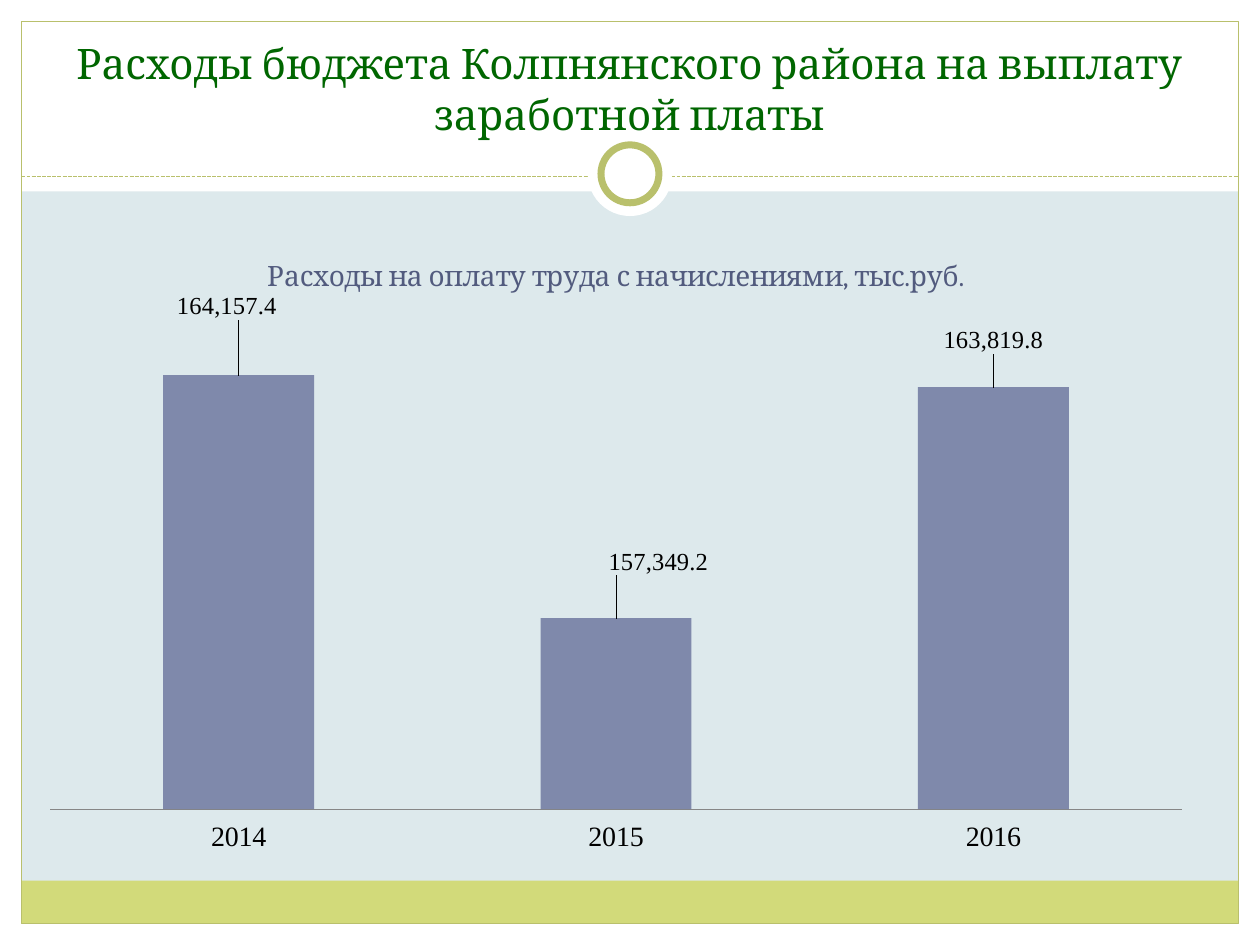
from dataclasses import dataclass

from lxml import etree
from pptx import Presentation
from pptx.chart.data import CategoryChartData
from pptx.dml.color import RGBColor
from pptx.enum.chart import XL_CHART_TYPE, XL_LABEL_POSITION, XL_TICK_LABEL_POSITION, XL_TICK_MARK
from pptx.enum.dml import MSO_LINE
from pptx.enum.shapes import MSO_CONNECTOR, MSO_SHAPE
from pptx.enum.text import MSO_ANCHOR, PP_ALIGN
from pptx.oxml import parse_xml
from pptx.oxml.ns import nsdecls, qn
from pptx.util import Inches, Pt

COLUMN = XL_CHART_TYPE.COLUMN_CLUSTERED
OUTSIDE = XL_LABEL_POSITION.OUTSIDE_END
LOW = XL_TICK_LABEL_POSITION.LOW
NO_TICK = XL_TICK_MARK.NONE
DASH = MSO_LINE.SQUARE_DOT
STRAIGHT = MSO_CONNECTOR.STRAIGHT
RECT, OVAL = MSO_SHAPE.RECTANGLE, MSO_SHAPE.OVAL
BOTTOM, CENTER = MSO_ANCHOR.BOTTOM, PP_ALIGN.CENTER


@dataclass(frozen=True)
class Theme:
    back: str = "DDE9EC"
    white: str = "FFFFFF"
    band: str = "D2DA7A"
    edge: str = "B9C06C"
    title: str = "006600"
    bar: str = "727CA3"
    head: str = "525B7E"
    axis: str = "868686"
    black: str = "000000"
    serif: str = "Cambria"
    roman: str = "Times New Roman"
    big: int = 24
    mid: int = 16
    small: int = 14


T = Theme()

# year, value, label shift as a share of the chart's width and height
DATA = [
    ("2014", 164157.4, -0.01, -0.08),
    ("2015", 157349.2, 0.036, -0.06),
    ("2016", 163819.8, 0, -0.045),
]


def rgb(code):
    return RGBColor.from_string(code)


def style(font, size, color, face):
    font.size, font.name, font.bold = Pt(size), face, False
    font.color.rgb = rgb(color)


def add_text(slide, text, box, size=T.big, color=T.title, face=T.serif, align=CENTER, anchor=BOTTOM):
    frame = slide.shapes.add_textbox(*map(Inches, box)).text_frame
    frame.word_wrap, frame.vertical_anchor = True, anchor
    para = frame.paragraphs[0]
    para.alignment = align
    run = para.add_run()
    run.text = text
    style(run.font, size, color, face)


def add_part(slide, kind, box, fill=None, line=None, width=0.75):
    part = slide.shapes.add_shape(kind, *map(Inches, box))
    part.shadow.inherit = False
    if fill:
        part.fill.solid()
        part.fill.fore_color.rgb = rgb(fill)
    else:
        part.fill.background()
    if line:
        part.line.color.rgb = rgb(line)
        part.line.width = Pt(width)
    else:
        part.line.fill.background()


def add_frame(slide, box, rim=0.17, head=1.52, foot=0.34, rule=1.4):
    """White margins, foot band, outline, dashed rule and ring."""
    x, y, w, h = box
    right, base = x + w - rim, y + h - rim
    for side in (
        (x, base, w, rim),
        (x, y, w, head),
        (x, y, rim, h),
        (right, y, rim, h),
    ):
        add_part(slide, RECT, side, T.white)
    wide = w - 2 * rim
    add_part(slide, RECT, (x + rim, base - foot, wide, foot), T.band)
    add_part(slide, RECT, (x + rim, y + rim, wide, h - 2 * rim), line=T.edge)

    ends = map(Inches, (x + rim, y + rule, right, y + rule))
    dash = slide.shapes.add_connector(STRAIGHT, *ends)
    dash.line.color.rgb = rgb(T.edge)
    dash.line.width, dash.line.dash_style = Pt(0.75), DASH
    etree.SubElement(dash._element.spPr, qn("a:effectLst"))

    mid_x, mid_y = x + w / 2, y + 1.38
    for size, line in ((0.67, None), (0.46, T.edge)):
        ring = (mid_x - size / 2, mid_y - size / 2, size, size)
        add_part(slide, OVAL, ring, T.white, line, 4)


def layout(x, y, w=None, h=None):
    """Manual chart layout; with a size it fixes the inner plot area."""
    tags = [("x", x), ("y", y)]
    if w is not None:
        tags = [("layoutTarget", "inner"), ("xMode", "edge"), ("yMode", "edge"),
                *tags, ("w", w), ("h", h)]
    body = "".join(f'<c:{tag} val="{val}"/>' for tag, val in tags)
    return parse_xml(f'<c:layout {nsdecls("c")}><c:manualLayout>{body}</c:manualLayout></c:layout>')


def add_bars(slide, text, box):
    data = CategoryChartData(number_format="#,##0.0")
    data.categories = [row[0] for row in DATA]
    data.add_series("Series 1", [row[1] for row in DATA])
    chart = slide.shapes.add_chart(COLUMN, *map(Inches, box), data).chart
    style(chart.font, T.mid, T.black, T.serif)
    chart.has_legend = False
    chart.has_title = True
    para = chart.chart_title.text_frame.paragraphs[0]
    run = para.add_run()
    run.text = text
    style(run.font, T.mid, T.head, T.serif)

    years, scale = chart.category_axis, chart.value_axis
    years.major_tick_mark = NO_TICK
    years.tick_label_position = LOW
    years.format.line.color.rgb = rgb(T.axis)
    style(years.tick_labels.font, T.mid, T.black, T.roman)
    scale.visible = scale.has_major_gridlines = False
    scale.minimum_scale, scale.maximum_scale = 152000, 166000

    plot = chart.plots[0]
    plot.gap_width, plot.vary_by_categories = 150, False
    bars = plot.series[0]
    bars.format.fill.solid()
    bars.format.fill.fore_color.rgb = rgb(T.bar)
    tint = bars._element.find(".//" + qn("a:srgbClr"))
    etree.SubElement(tint, qn("a:alpha"), val="88000")

    for at in range(len(DATA)):
        label = bars.points[at].data_label
        style(label.font, T.small, T.black, T.roman)
        label.position = OUTSIDE
    for mark, row in zip(bars._element.iter(qn("c:dLbl")), DATA):
        mark.find(qn("c:idx")).addnext(layout(*row[2:]))

    area = chart._chartSpace.chart.plotArea
    for old in area.findall(qn("c:layout")):
        area.remove(old)
    area.insert(0, layout(0.02, 0.12, 0.96, 0.8))


def main():
    deck = Presentation()
    deck.slide_width, deck.slide_height = Inches(10), Inches(7.5)
    slide = deck.slides.add_slide(deck.slide_layouts[6])
    slide.background.fill.solid()
    slide.background.fill.fore_color.rgb = rgb(T.back)
    add_frame(slide, (0, 0, 10, 7.5))
    add_text(slide, "Расходы бюджета Колпнянского района на выплату заработной платы",
             (0.33, 0.25, 9.33, 0.9))
    add_bars(slide, "Расходы на оплату труда с начислениями, тыс.руб.", (0.21, 1.86, 9.36, 4.96))
    deck.save("out.pptx")


if __name__ == "__main__":
    main()
